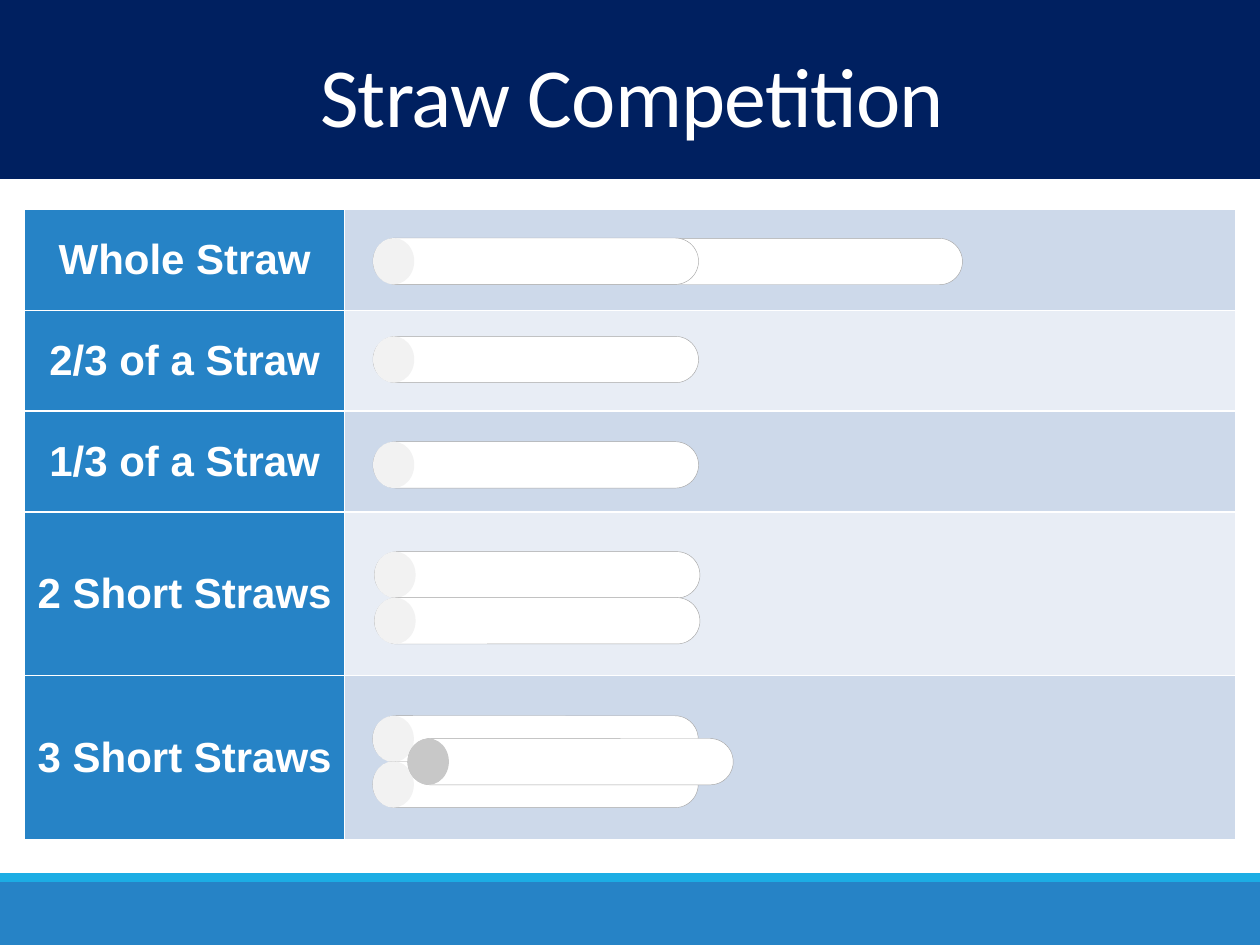
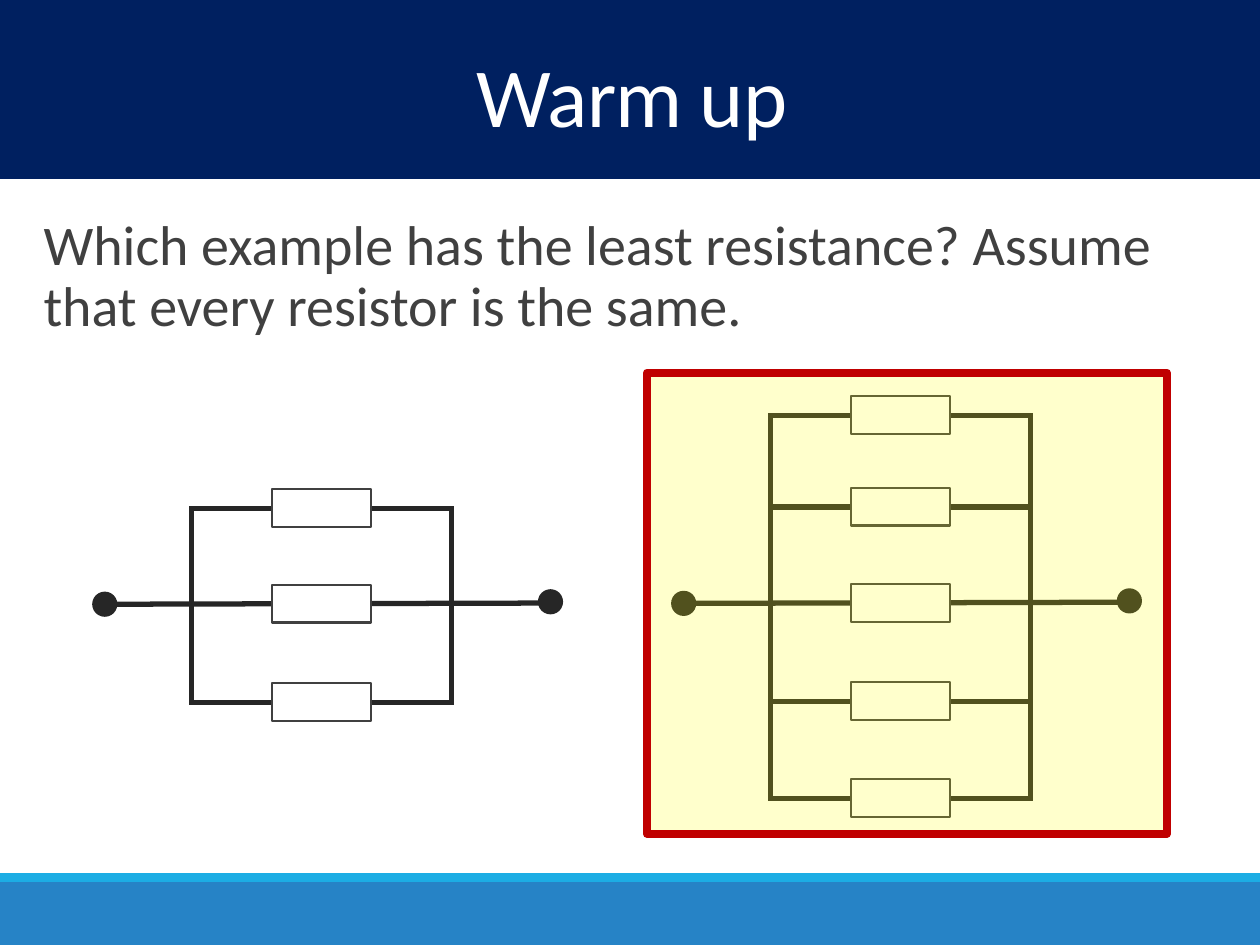
from lxml.etree import SubElement
from pptx import Presentation
from pptx.dml.color import RGBColor
from pptx.enum.shapes import MSO_CONNECTOR as Connector, MSO_SHAPE as Preset
from pptx.enum.text import MSO_ANCHOR as Anchor, MSO_AUTO_SIZE as AutoSize, PP_ALIGN as Align
from pptx.oxml.ns import qn
from pptx.util import Pt

WIDTH, HEIGHT = 720, 540
COLORS = {
    "white": "FFFFFF", "navy": "002060", "blue": "2683C6", "sky": "1CADE4",
    "row_dark": "CDD9EA", "row_light": "E8EDF5", "straw_edge": "A6A6A6",
    "straw_end": "F2F2F2", "shaded_end": "C8C8C8", "text": "404040",
    "wire": "262626", "yellow": "FFFF00", "red": "C00000",
}
STRAW_HEIGHT, STRAW_END, SHORT_STRAW = 26.5, 23.5, 186
RAIL_GAP, DOT = 148.3, 14.4
RESISTOR_WIDTH, RESISTOR_HEIGHT = 57, 21.6


def color(name):
    return RGBColor.from_string(COLORS[name])


class Deck:
    """Holds the shared style and the slide being drawn."""

    def __init__(self):
        self.presentation = Presentation()
        self.presentation.slide_width = Pt(WIDTH)
        self.presentation.slide_height = Pt(HEIGHT)
        self.slide = None

    def add_slide(self, title):
        layout = self.presentation.slide_layouts[5]
        self.slide = self.presentation.slides.add_slide(layout)
        self.shape(0, 504, WIDTH, 36, "blue")
        self.shape(0, 499, WIDTH, 5, "sky")
        self.shape(0, 0, WIDTH, 102.3, "navy")
        self.title(title)

    def title(self, text):
        title = self.slide.shapes.title
        self.slide.shapes.element.append(title.element)
        title.left, title.top, title.width, title.height = Pt(2.2), Pt(30), Pt(718), Pt(60.5)
        frame = title.text_frame
        frame.auto_size = AutoSize.NONE
        frame.vertical_anchor = Anchor.TOP
        paragraph = frame.paragraphs[0]
        paragraph.alignment = Align.CENTER
        paragraph.line_spacing = 0.85
        run = self.run(paragraph, text, 48, "white")
        run.font._element.set("spc", "-50")

    def run(self, paragraph, text, size, tint, font="Calibri", bold=False):
        run = paragraph.add_run()
        run.text = text
        run.font.name, run.font.size, run.font.bold = font, Pt(size), bold
        run.font.color.rgb = color(tint)
        return run

    def shape(self, left, top, width, height, fill, line=None, weight=1.25,
              preset=Preset.RECTANGLE, alpha=None):
        shape = self.slide.shapes.add_shape(preset, Pt(left), Pt(top), Pt(width), Pt(height))
        shape.shadow.inherit = False
        shape.fill.solid()
        shape.fill.fore_color.rgb = color(fill)
        if alpha:
            fill_color = shape.element.spPr.find(qn("a:solidFill"))[0]
            SubElement(fill_color, qn("a:alpha"), val=str(alpha * 1000))
        if line:
            shape.line.color.rgb = color(line)
            shape.line.width = Pt(weight)
        else:
            shape.line.fill.background()
        return shape

    def wire(self, start_x, start_y, end_x, end_y):
        wire = self.slide.shapes.add_connector(
            Connector.STRAIGHT, Pt(start_x), Pt(start_y), Pt(end_x), Pt(end_y))
        wire.line.color.rgb = color("wire")
        wire.line.width = Pt(3)
        SubElement(wire.element.spPr, qn("a:effectLst"))

    def body(self, text):
        box = self.slide.shapes.add_textbox(Pt(24.9), Pt(120.7), Pt(667), Pt(371.5))
        frame = box.text_frame
        frame.word_wrap = True
        frame.margin_left = frame.margin_right = 0
        paragraph = frame.paragraphs[0]
        paragraph.line_spacing = 0.9
        paragraph.space_before, paragraph.space_after = Pt(12), Pt(2)
        self.run(paragraph, text, 32, "text")

    def label_table(self, rows):
        frame = self.slide.shapes.add_table(
            len(rows), 2, Pt(14.1), Pt(119.7), Pt(692.1), Pt(360))
        table = frame.table
        table.first_row = table.horz_banding = False
        table.columns[0].width, table.columns[1].width = Pt(182.9), Pt(509.2)
        for index, (label, height) in enumerate(rows):
            table.rows[index].height = Pt(height)
            label_cell, straw_cell = table.cell(index, 0), table.cell(index, 1)
            for cell, fill in ((label_cell, "blue"),
                               (straw_cell, "row_light" if index % 2 else "row_dark")):
                cell.fill.solid()
                cell.fill.fore_color.rgb = color(fill)
            label_cell.vertical_anchor = Anchor.MIDDLE
            paragraph = label_cell.text_frame.paragraphs[0]
            paragraph.alignment = Align.CENTER
            self.run(paragraph, label, 24, "white", "Arial", True)

    def straw(self, left, top, length=SHORT_STRAW, end="straw_end"):
        straw = self.shape(left, top, length, STRAW_HEIGHT, "white", "straw_edge", 0.25,
                           Preset.ROUNDED_RECTANGLE)
        straw.adjustments[0] = 0.5
        self.shape(left, top, STRAW_END, STRAW_HEIGHT, end, preset=Preset.OVAL)

    def dot(self, center_x, center_y):
        self.shape(center_x - DOT / 2, center_y - DOT / 2, DOT, DOT, "wire",
                   preset=Preset.OVAL)

    def circuit(self, left, branches):
        right = left + RAIL_GAP
        middle = branches[len(branches) // 2]
        for y in branches:
            if y != middle:
                self.wire(left, y, right, y)
        for x in (left, right):
            self.wire(x, branches[0] - 1.5, x, branches[-1] + 1.5)
        self.wire(left - 50, middle, right + 62, middle - 0.7)
        self.dot(left - 49.7, middle)
        self.dot(right + 56.7, middle - 1.4)
        for y in branches:
            self.shape((left + right - RESISTOR_WIDTH) / 2, y - 0.3 - RESISTOR_HEIGHT / 2,
                       RESISTOR_WIDTH, RESISTOR_HEIGHT, "white", "text")


def straw_competition(deck):
    deck.add_slide("Straw Competition")
    deck.label_table([
        ("Whole Straw", 57.6), ("2/3 of a Straw", 57.6), ("1/3 of a Straw", 57.6),
        ("2 Short Straws", 93.6), ("3 Short Straws", 93.6),
    ])
    deck.straw(214.5, 136.2, 335.5)
    for left, top in ((213.2, 136), (213.2, 192.2), (213.2, 252.4), (214, 315.2),
                      (214, 341.5), (213, 409), (213, 435)):
        deck.straw(left, top)
    deck.straw(233, 422, end="shaded_end")


def warm_up(deck):
    deck.add_slide("Warm up")
    deck.body("Which example has the least resistance? Assume that every resistor is the same.")
    deck.circuit(109.6, [290.7, 345.3, 401.6])
    deck.circuit(440.4, [237.6, 289.8, 344.8, 400.8, 456.3])
    deck.shape(369.6, 213, 297.2, 263.5, "yellow", "red", 4.5, alpha=20)


def main():
    deck = Deck()
    straw_competition(deck)
    warm_up(deck)
    deck.presentation.save("out.pptx")


if __name__ == "__main__":
    main()
